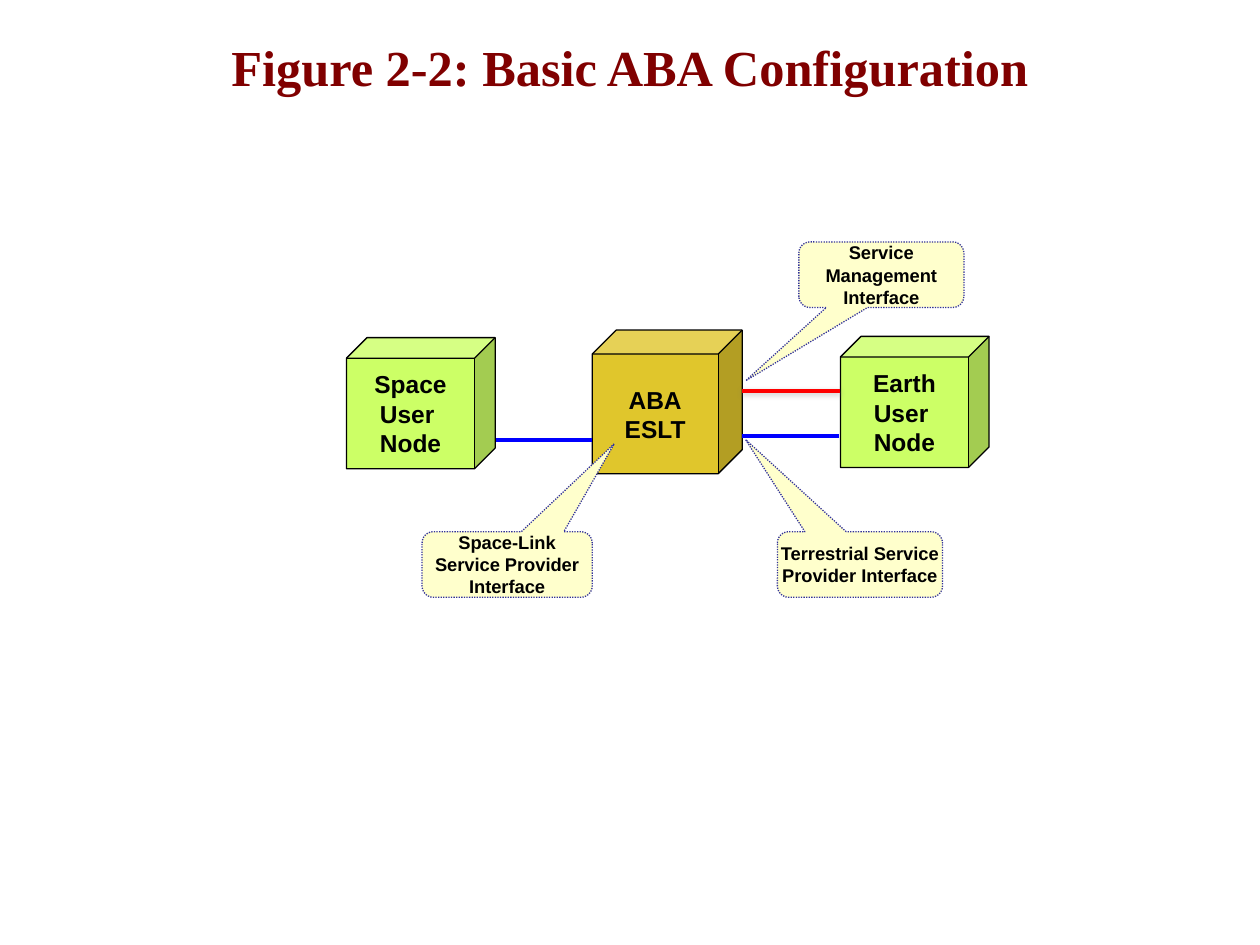
from dataclasses import dataclass

from lxml.etree import SubElement
from pptx import Presentation
from pptx.dml.color import RGBColor as RGB
from pptx.enum.dml import MSO_LINE
from pptx.enum.shapes import MSO_CONNECTOR, MSO_SHAPE
from pptx.enum.text import MSO_ANCHOR, PP_ALIGN
from pptx.oxml.ns import qn
from pptx.util import Inches, Pt


@dataclass(frozen=True)
class Theme:
    title: RGB = RGB(0x80, 0x00, 0x00)
    ink: RGB = RGB(0x00, 0x00, 0x00)
    user_node: RGB = RGB(0xCC, 0xFF, 0x66)
    eslt: RGB = RGB(0xE0, 0xC6, 0x2C)
    note: RGB = RGB(0xFF, 0xFF, 0xCC)
    note_line: RGB = RGB(0x33, 0x33, 0x99)
    data_link: RGB = RGB(0x00, 0x00, 0xFF)
    management_link: RGB = RGB(0xFF, 0x00, 0x00)
    shadow: str = "808080"
    title_font: str = "Times New Roman"
    label_font: str = "Arial"
    title_size: float = 28.8
    node_size: float = 14
    note_size: float = 10.5
    outline: float = 0.75
    link: float = 2.25


THEME = Theme()


def write_text(shape, text, font, size, color, anchor=MSO_ANCHOR.MIDDLE):
    tf = shape.text_frame
    tf.text = text
    tf.vertical_anchor = anchor
    for p in tf.paragraphs:
        p.alignment = PP_ALIGN.CENTER
        for r in p.runs:
            r.font.name = font
            r.font.size = Pt(size)
            r.font.bold = True
            r.font.color.rgb = color
    return tf


def clear_margins(tf):
    tf.margin_left = tf.margin_right = tf.margin_top = tf.margin_bottom = 0


def add_title(s, text):
    box = s.shapes.add_textbox(Inches(0.75), Inches(0.29), Inches(8.5), Inches(0.83))
    tf = write_text(box, text, THEME.title_font, THEME.title_size, THEME.title, MSO_ANCHOR.TOP)
    tf.word_wrap = True
    clear_margins(tf)


def add_outlined(s, kind, at, adjustments, fill, line):
    sp = s.shapes.add_shape(kind, *map(Inches, at))
    sp.shadow.inherit = False
    for i, value in enumerate(adjustments):
        sp.adjustments[i] = value
    sp.fill.solid()
    sp.fill.fore_color.rgb = fill
    sp.line.color.rgb = line
    sp.line.width = Pt(THEME.outline)
    return sp


def add_node(s, text, at, depth, fill):
    sp = add_outlined(s, MSO_SHAPE.CUBE, at, [depth], fill, THEME.ink)
    tf = write_text(sp, text, THEME.label_font, THEME.node_size, THEME.ink)
    tf.word_wrap = False


def add_callout(s, text, left, top, width, pointer):
    sp = add_outlined(s, MSO_SHAPE.ROUNDED_RECTANGULAR_CALLOUT, (left, top, width, 0.52),
                      (*pointer, 0.17), THEME.note, THEME.note_line)
    sp.line.dash_style = MSO_LINE.ROUND_DOT
    tf = write_text(sp, text, THEME.label_font, THEME.note_size, THEME.ink)
    tf.word_wrap = True
    clear_margins(tf)


def add_link(s, x1, x2, y, color, shadow=False):
    line = s.shapes.add_connector(MSO_CONNECTOR.STRAIGHT, *map(Inches, (x1, y, x2, y)))
    line.line.color.rgb = color
    line.line.width = Pt(THEME.link)
    effects = SubElement(line._element.spPr, qn("a:effectLst"))
    if shadow:
        outer = SubElement(effects, qn("a:outerShdw"), blurRad=str(Pt(3.1)),
                           dist=str(Pt(1.6)), dir="5400000", rotWithShape="0")
        tint = SubElement(outer, qn("a:srgbClr"), val=THEME.shadow)
        SubElement(tint, qn("a:alpha"), val="38000")


def main():
    prs = Presentation()
    prs.slide_width, prs.slide_height = Inches(10), Inches(7.5)
    s = prs.slides.add_slide(prs.slide_layouts[6])

    add_title(s, "Figure 2-2: Basic ABA Configuration")
    add_node(s, "Space\vUser \nNode", (2.75, 2.68, 1.18, 1.04), 0.157, THEME.user_node)
    add_node(s, "ABA\nESLT", (4.7, 2.62, 1.19, 1.14), 0.167, THEME.eslt)
    add_link(s, 5.89, 6.66, 3.46, THEME.data_link)
    add_node(s, "Earth\vUser \nNode", (6.67, 2.67, 1.18, 1.04), 0.157, THEME.user_node)
    add_link(s, 3.94, 4.7, 3.49, THEME.data_link)

    add_callout(s, "Terrestrial Service Provider Interface", 6.17, 4.22, 1.31, (-0.693, -1.906))
    add_callout(s, "Space-Link Service Provider Interface", 3.35, 4.22, 1.35, (0.63, -1.844))
    add_callout(s, "Service\nManagement\nInterface", 6.34, 1.92, 1.31, (-0.822, 1.618))
    add_link(s, 6.67, 5.89, 3.1, THEME.management_link, shadow=True)

    prs.save("out.pptx")


if __name__ == "__main__":
    main()
